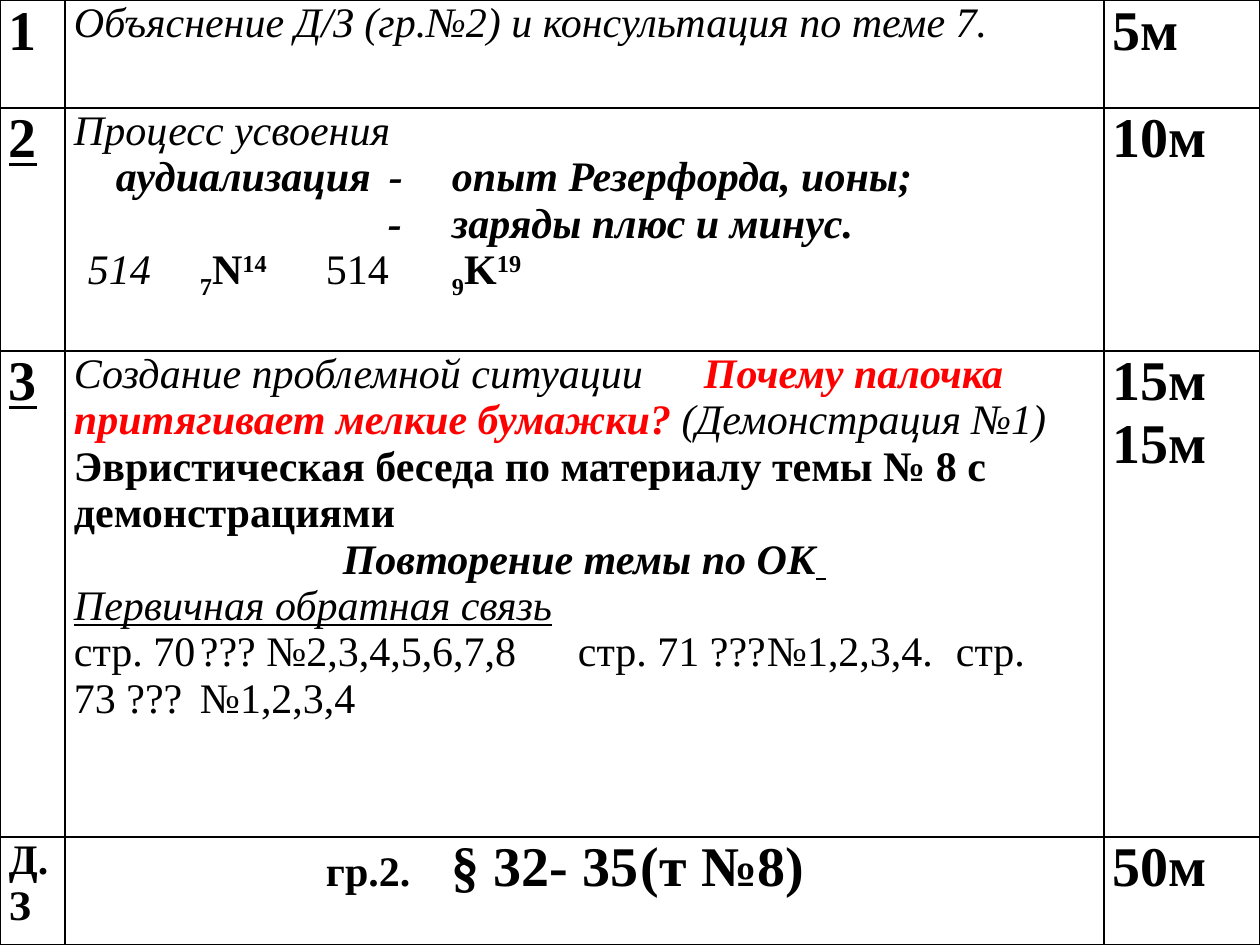
from lxml import etree
from pptx import Presentation
from pptx.dml.color import RGBColor
from pptx.enum.text import PP_ALIGN
from pptx.oxml.ns import qn
from pptx.util import Emu, Pt

CENTER = PP_ALIGN.CENTER
PX_PER_INCH = 126
FONT = "Times New Roman"
BLACK, RED = "000000", "FF0000"
THIN, THICK = 1, 1.5
BODY, LARGE = 24, 32
COLUMN_WIDTHS = [65, 1039, 156]
ROW_HEIGHTS = [108, 243, 486, 108]


def px(length):
    return Emu(round(length * 914400 / PX_PER_INCH))


def color(hex_string):
    return RGBColor.from_string(hex_string)


def line(*runs, size=BODY, **layout):
    """One paragraph; each run is (text, style letters b/i/u, options)."""
    return {"runs": runs, "size": size, **layout}


def run(text, style="", **options):
    return {"text": text, "style": style, **options}


def large(text, style="b"):
    return line(run(text, style), size=LARGE)


LESSON_PLAN = [
    [
        [large("1")],
        [line(run("Объяснение Д/З (гр.№2) и консультация по теме 7.", "i"))],
        [large("5м")],
    ],
    [
        [large("2", "bu")],
        [
            line(run("Процесс усвоения", "i")),
            line(run("аудиализация\t-\tопыт Резерфорда, ионы;", "bi"),
                 indent=42, tabs=[339, 406]),
            line(run("-\tзаряды плюс и минус.", "bi"), indent=314, tabs=[391]),
            line(run("514\t", "i"),
                 run("7", "b", baseline=-25), run("N", "b"),
                 run("14", "b", baseline=30),
                 run("\t514\t"),
                 run("9", "b", baseline=-25), run("K", "b"),
                 run("19", "b", baseline=30),
                 indent=14, tabs=[98, 280, 396]),
        ],
        [large("10м")],
    ],
    [
        [large("3", "bu")],
        [
            line(run("Создание проблемной ситуации\t", "i"),
                 run("Почему палочка притягивает мелкие бумажки?", "bi", ink=RED),
                 run(" (Демонстрация №1)", "i"), tabs=[611]),
            line(run("Эвристическая беседа по материалу темы № 8 "
                     "с демонстрациями", "b")),
            line(run("Повторение темы по ОК", "bi"), run(" ", "iu"), align=CENTER),
            line(run("Первичная обратная связь", "iu")),
            line(run("стр. 70\t??? №2,3,4,5,6,7,8\tстр. 71 ???\t№1,2,3,4.\t"
                     "стр. 73 ???\t№1,2,3,4"), tabs=[143, 522, 731, 939]),
        ],
        [large("15м"), large("15м")],
    ],
    [
        [line(run("Д.З", "b"))],
        [line(run("гр.2.\t", "b"), run("§ 32- 35\t(т №8)", "b", size=LARGE),
              size=None, indent=252, tabs=[393, 607])],
        [large("50м")],
    ],
]


def set_tabs(paragraph, indent, stops):
    properties = paragraph._p.get_or_add_pPr()
    properties.set("marL", "0")
    properties.set("indent", str(px(indent)))
    if stops:
        tab_list = etree.Element(qn("a:tabLst"))
        for stop in stops:
            etree.SubElement(tab_list, qn("a:tab"), pos=str(px(stop)), algn="l")
        properties.insert(0, tab_list)


def write_paragraph(paragraph, content):
    paragraph.font.name = FONT
    if content["size"]:
        paragraph.font.size = Pt(content["size"])
    if "align" in content:
        paragraph.alignment = content["align"]
    set_tabs(paragraph, content.get("indent", 0), content.get("tabs", []))
    for part in content["runs"]:
        piece = paragraph.add_run()
        piece.text = part["text"]
        font = piece.font
        font.bold = "b" in part["style"]
        font.italic = "i" in part["style"]
        font.underline = "u" in part["style"]
        font.color.rgb = color(part.get("ink", BLACK))
        if not content["size"]:
            font.size = Pt(part.get("size", BODY))
        if "baseline" in part:
            piece._r.get_or_add_rPr().set("baseline", str(part["baseline"] * 1000))


def set_borders(cell, widths):
    """Draw the left, right, top and bottom borders in points."""
    properties = cell._tc.get_or_add_tcPr()
    for side, width in zip("LRTB", widths):
        border = etree.SubElement(properties, qn(f"a:ln{side}"), w=str(Pt(width)))
        fill = etree.SubElement(border, qn("a:solidFill"))
        etree.SubElement(fill, qn("a:srgbClr"), val=BLACK)


def write_cell(cell, paragraphs, borders):
    cell.margin_left = cell.margin_right = px(9)
    cell.margin_top = cell.margin_bottom = 0
    set_borders(cell, borders)
    cell.fill.background()
    frame = cell.text_frame
    for index, content in enumerate(paragraphs):
        paragraph = frame.add_paragraph() if index else frame.paragraphs[0]
        write_paragraph(paragraph, content)


def add_lesson_table(slide):
    last_row, last_column = len(ROW_HEIGHTS) - 1, len(COLUMN_WIDTHS) - 1
    table = slide.shapes.add_table(
        len(ROW_HEIGHTS), len(COLUMN_WIDTHS), 0, 0,
        px(sum(COLUMN_WIDTHS)), px(sum(ROW_HEIGHTS))).table
    table.first_row = table.horz_banding = False
    for column, width in zip(table.columns, COLUMN_WIDTHS):
        column.width = px(width)
    for row, height in zip(table.rows, ROW_HEIGHTS):
        row.height = px(height)
    for r, stage in enumerate(LESSON_PLAN):
        for c, paragraphs in enumerate(stage):
            heavy = (c <= 1, c in (0, last_column), r == 0, r == last_row)
            borders = [THICK if is_heavy else THIN for is_heavy in heavy]
            write_cell(table.cell(r, c), paragraphs, borders)


def main():
    deck = Presentation()
    deck.slide_width = px(sum(COLUMN_WIDTHS))
    deck.slide_height = px(sum(ROW_HEIGHTS))
    slide = deck.slides.add_slide(deck.slide_layouts[6])
    add_lesson_table(slide)
    deck.save("out.pptx")


if __name__ == "__main__":
    main()
